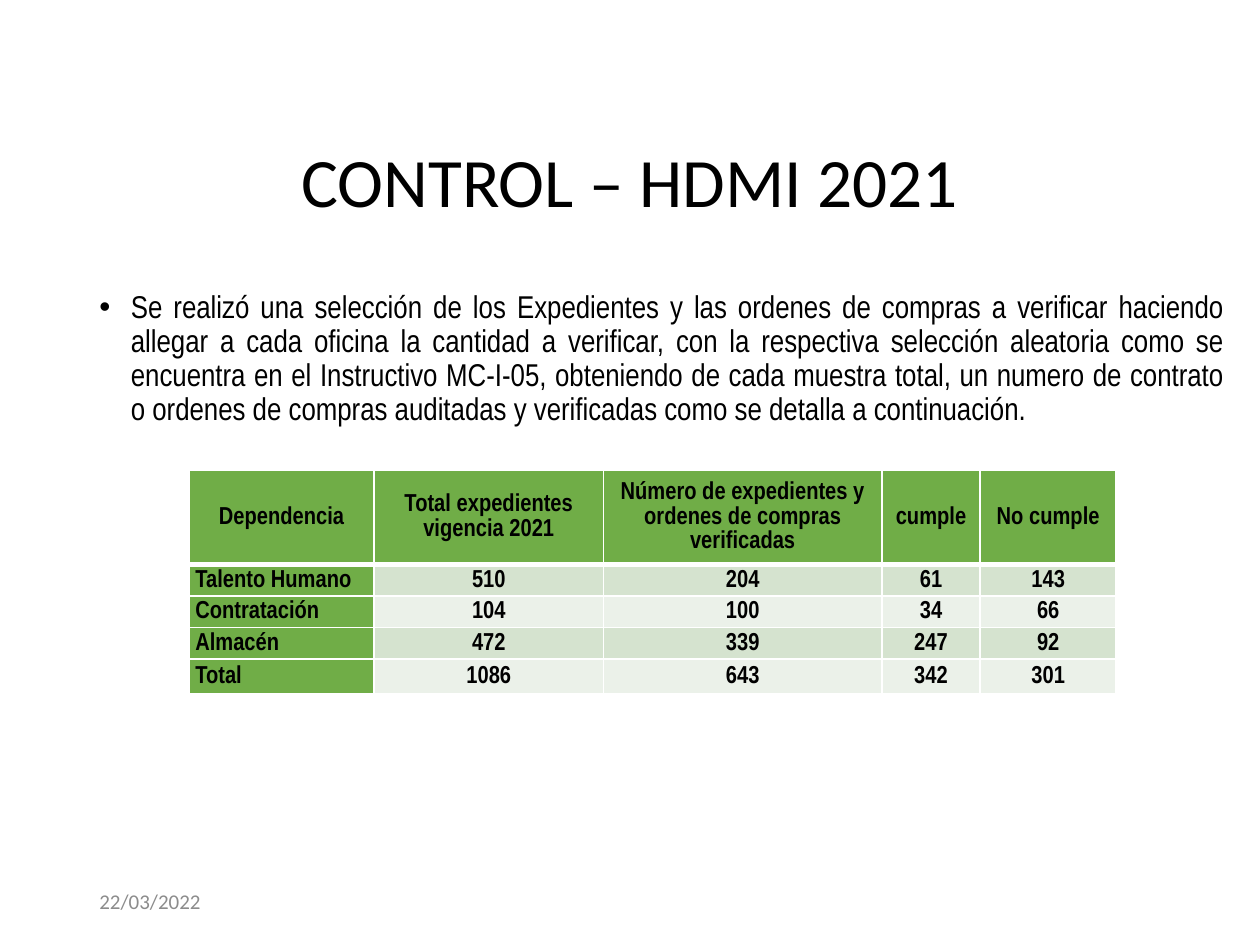
from dataclasses import dataclass
from lxml.etree import SubElement
from pptx import Presentation
from pptx.dml.color import RGBColor
from pptx.enum.text import MSO_ANCHOR, PP_ALIGN
from pptx.oxml.ns import qn
from pptx.util import Pt


@dataclass(frozen=True)
class Theme:
    ink: str = "000000"
    muted: str = "8C8C8C"
    line: str = "FFFFFF"
    green: str = "70AD47"
    bands: tuple = ("D5E3CF", "EBF1E9")
    sans: str = "Calibri"
    narrow: str = "Arial Narrow"
    title: float = 39.6
    body: float = 18
    cell: float = 14
    date: float = 12


THEME = Theme()
TITLE = "CONTROL – HDMI 2021"
BODY = (
    "Se realizó una selección de los Expedientes y las ordenes de compras a "
    "verificar haciendo allegar a cada oficina la cantidad a verificar, con la "
    "respectiva selección aleatoria como se encuentra en el Instructivo "
    "MC-I-05, obteniendo de cada muestra total, un numero de contrato o ordenes "
    "de compras auditadas y verificadas como se detalla a continuación."
)
DATE = "22/03/2022"
ROWS = (
    ("Dependencia", "Total expedientes vigencia 2021",
     "Número de expedientes y ordenes de compras verificadas",
     "cumple", "No cumple"),
    ("Talento Humano", "510", "204", "61", "143"),
    ("Contratación", "104", "100", "34", "66"),
    ("Almacén", "472", "339", "247", "92"),
    ("Total", "1086", "643", "342", "301"),
)
WIDTHS = (105.84, 131.04, 159.12, 56.16, 77.76)
HEIGHTS = (42.3, 16.5, 14, 14, 20)


def style(para, face, size, color, align, space, bold=False):
    para.alignment = align
    para.line_spacing = space
    font = para.font
    font.name, font.size, font.bold = face, Pt(size), bold
    font.color.rgb = RGBColor.from_string(color)


def add_text(slide, box, text, anchor):
    frame = slide.shapes.add_textbox(*map(Pt, box)).text_frame
    frame.word_wrap = True
    frame.vertical_anchor = anchor
    frame.text = text
    return frame.paragraphs[0]


def add_title(slide, box):
    para = add_text(slide, box, TITLE, MSO_ANCHOR.MIDDLE)
    style(para, THEME.sans, THEME.title, THEME.ink, PP_ALIGN.CENTER, 0.9)


def add_body(slide, box):
    para = add_text(slide, box, BODY, MSO_ANCHOR.TOP)
    props = para._p.get_or_add_pPr()
    props.set("marL", str(Pt(18)))
    props.set("indent", str(Pt(-18)))
    SubElement(props, qn("a:buFont"), typeface="Arial")
    SubElement(props, qn("a:buChar"), char="•")
    style(para, THEME.narrow, THEME.body, THEME.ink, PP_ALIGN.JUSTIFY, 0.9)


def add_date(slide, box):
    para = add_text(slide, box, DATE, MSO_ANCHOR.MIDDLE)
    style(para, THEME.sans, THEME.date, THEME.muted, PP_ALIGN.LEFT, 1.0)


def add_edges(cell, head):
    props = cell._tc.get_or_add_tcPr()
    for at, side in enumerate(("lnL", "lnR", "lnT", "lnB")):
        width = Pt(3 if head and side == "lnB" else 1)
        line = props.makeelement(qn(f"a:{side}"), {"w": str(width)})
        fill = SubElement(line, qn("a:solidFill"))
        SubElement(fill, qn("a:srgbClr"), val=THEME.line)
        props.insert(at, line)


def fill_cell(cell, text, row, col):
    cell.text = text
    cell.vertical_anchor = MSO_ANCHOR.MIDDLE
    cell.margin_left = cell.margin_right = Pt(3.6)
    cell.margin_top = cell.margin_bottom = 0
    named = row == 0 or col == 0
    color = THEME.green if named else THEME.bands[(row - 1) % 2]
    cell.fill.solid()
    cell.fill.fore_color.rgb = RGBColor.from_string(color)
    align = PP_ALIGN.JUSTIFY if row and not col else PP_ALIGN.CENTER
    para = cell.text_frame.paragraphs[0]
    style(para, THEME.narrow, THEME.cell, THEME.ink, align, 1.07, True)
    add_edges(cell, row == 0)


def add_counts(slide, left, top):
    box = map(Pt, (left, top, sum(WIDTHS), sum(HEIGHTS)))
    table = slide.shapes.add_table(len(ROWS), len(WIDTHS), *box).table
    for col, width in zip(table.columns, WIDTHS):
        col.width = Pt(width)
    for row, height in zip(table.rows, HEIGHTS):
        row.height = Pt(height)
    for r, texts in enumerate(ROWS):
        for c, text in enumerate(texts):
            fill_cell(table.cell(r, c), text, r, c)


def main():
    deck = Presentation()
    deck.slide_width, deck.slide_height = Pt(720), Pt(540)
    slide = deck.slides.add_slide(deck.slide_layouts[6])
    add_title(slide, (49.68, 78.48, 620.64, 54.72))
    add_body(slide, (49.68, 163, 657.36, 337.4))
    add_date(slide, (49.68, 500.4, 162, 28.8))
    add_counts(slide, 108, 268.56)
    deck.save("out.pptx")


if __name__ == "__main__":
    main()
